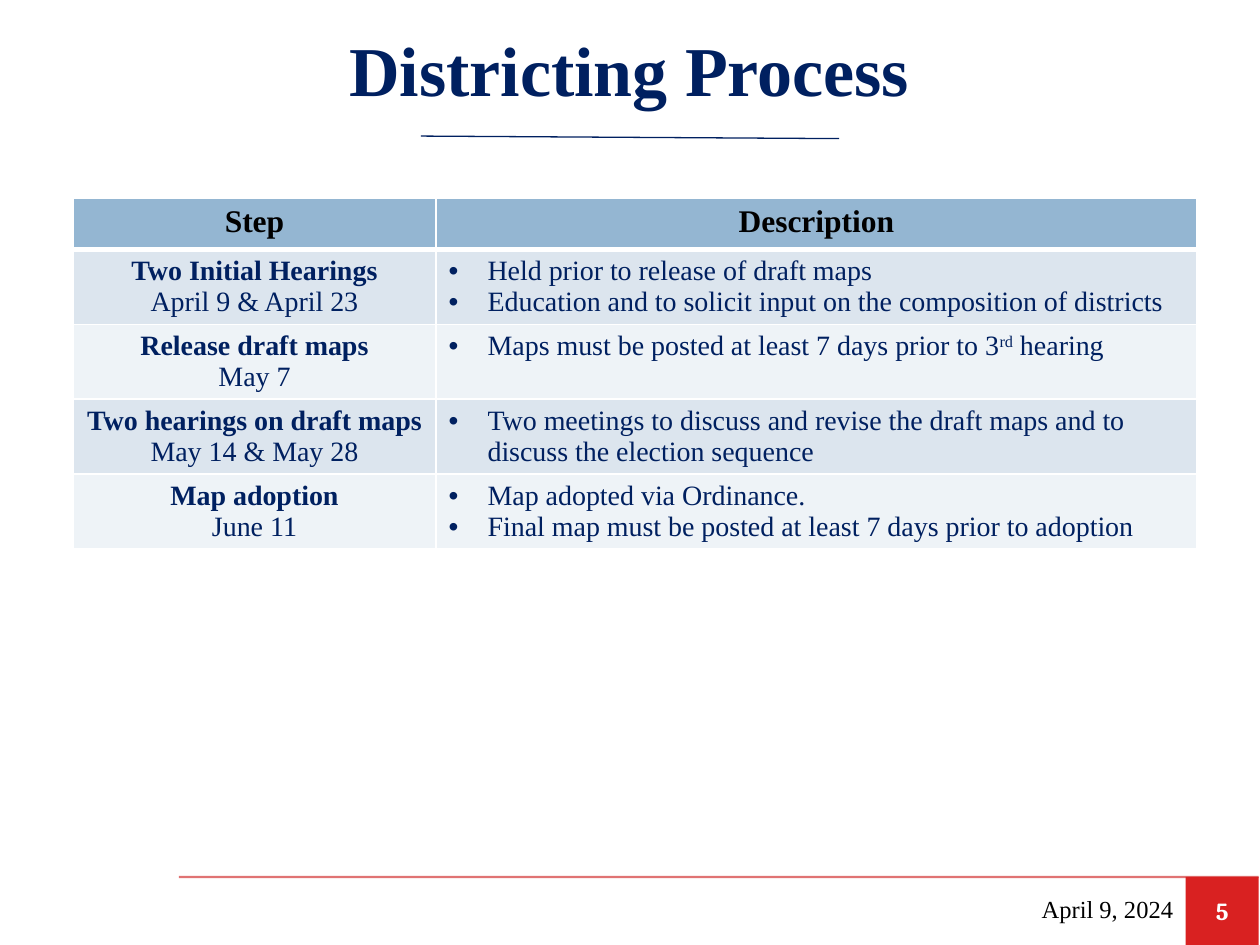
"""Build the Districting Process slide with its table of steps and dates."""
from lxml import etree
from pptx import Presentation
from pptx.dml.color import RGBColor
from pptx.enum import shapes, text
from pptx.oxml import ns
from pptx.util import Inches, Pt

COLORS = {
    "navy": "002060", "black": "000000", "white": "FFFFFF", "red": "D92121",
    "rule": "C80000", "header": "94B6D2", "band_dark": "DCE5EE", "band_light": "EEF3F7",
}
SERIF = "Times New Roman"
STEPS = [
    ("Two Initial Hearings", "April 9 & April 23",
     [["Held prior to release of draft maps"],
      ["Education and to solicit input on the composition of districts"]]),
    ("Release draft maps", "May 7",
     [["Maps must be posted at least 7 days prior to 3", "rd", " hearing"]]),
    ("Two hearings on draft maps", "May 14 & May 28",
     [["Two meetings to discuss and revise the draft maps and to "
       "discuss the election sequence"]]),
    ("Map adoption", "June 11",
     [["Map adopted via Ordinance."],
      ["Final map must be posted at least 7 days prior to adoption"]]),
]


def rgb(name):
    return RGBColor.from_string(COLORS[name])


def add_child(parent, tag, **attrs):
    return etree.SubElement(parent, ns.qn(tag), attrs)


def write(p, runs, size, color, bold=False, align=text.PP_ALIGN.CENTER, font=SERIF):
    """Fill a paragraph; every second run is a superscript."""
    p.alignment = align
    f = p.font
    f.name, f.size, f.bold = font, Pt(size), bold
    f.color.rgb = rgb(color)
    for i, words in enumerate(runs):
        r = p.add_run()
        r.text = words
        if i % 2:
            r.font._element.set("baseline", "30000")


def add_bullet(p):
    pPr = p._p.get_or_add_pPr()
    pPr.set("marL", str(Inches(0.31)))
    pPr.set("indent", str(-Inches(0.31)))
    add_child(pPr, "a:buFont", typeface="Arial")
    add_child(pPr, "a:buChar", char="•")


def paragraphs(tf, count):
    return [tf.paragraphs[0]] + [tf.add_paragraph() for _ in range(count - 1)]


def add_line(s, start, end, color, width, alpha=None):
    line = s.shapes.add_connector(
        shapes.MSO_CONNECTOR.STRAIGHT, *(Inches(v) for v in start + end))
    line.line.color.rgb = rgb(color)
    line.line.width = Pt(width)
    spPr = line._element.spPr
    add_child(spPr, "a:effectLst")
    if alpha:
        add_child(next(spPr.iter(ns.qn("a:srgbClr"))), "a:alpha", val=str(alpha * 1000))


def add_title(s, words):
    title = s.shapes.title
    title.left, title.top = Inches(0.37), Inches(0)
    title.width, title.height = Inches(9.25), Inches(1.08)
    title.text_frame.vertical_anchor = text.MSO_ANCHOR.MIDDLE
    write(title.text_frame.paragraphs[0], [words], 40, "navy", True)


def add_page_number(s, number):
    sp = s.shapes.add_shape(shapes.MSO_SHAPE.RECTANGLE, Inches(9.41), Inches(6.96),
                            Inches(0.58), Inches(0.54))
    sp.shadow.inherit = False
    sp.fill.solid()
    sp.fill.fore_color.rgb = rgb("red")
    sp.line.fill.background()
    sp.text_frame.vertical_anchor = text.MSO_ANCHOR.MIDDLE
    write(sp.text_frame.paragraphs[0], [number], 14, "white", True, font="Cambria")


def add_date(s, words):
    tf = s.shapes.add_textbox(Inches(6.49), Inches(7.01), Inches(2.92), Inches(0.4)).text_frame
    tf.word_wrap = True
    tf.vertical_anchor = text.MSO_ANCHOR.MIDDLE
    write(tf.paragraphs[0], [words], 14, "black", align=text.PP_ALIGN.RIGHT)


def style_cell(cell, fill, bottom=1):
    tcPr = cell._tc.get_or_add_tcPr()
    for side, width in zip("LRTB", (1, 1, 1, bottom)):
        ln = add_child(tcPr, f"a:ln{side}", w=str(Pt(width)))
        add_child(add_child(ln, "a:solidFill"), "a:srgbClr", val=COLORS["white"])
    cell.fill.solid()
    cell.fill.fore_color.rgb = rgb(fill)


def add_steps_table(s):
    table = s.shapes.add_table(len(STEPS) + 1, 2, Inches(0.58), Inches(1.57),
                               Inches(8.92), Inches(2.77)).table
    for column, width in zip(table.columns, (2.88, 6.04)):
        column.width = Inches(width)
    for i, row in enumerate(table.rows):
        row.height = Inches(0.59 if i else 0.41)
    for cell, label in zip(table.rows[0].cells, ("Step", "Description")):
        style_cell(cell, "header", 3)
        write(cell.text_frame.paragraphs[0], [label], 18, "black", True)
    for i, (step, dates, points) in enumerate(STEPS, 1):
        left, right = table.rows[i].cells
        for cell in (left, right):
            style_cell(cell, "band_dark" if i % 2 else "band_light")
        name, when = paragraphs(left.text_frame, 2)
        write(name, [step], 16, "navy", True)
        write(when, [dates], 16, "navy")
        for p, runs in zip(paragraphs(right.text_frame, len(points)), points):
            add_bullet(p)
            write(p, runs, 16, "navy", align=text.PP_ALIGN.LEFT)


def main():
    prs = Presentation()
    prs.slide_width, prs.slide_height = Inches(10), Inches(7.5)
    s = prs.slides.add_slide(prs.slide_layouts[5])
    add_line(s, (1.42, 6.96), (9.99, 6.96), "rule", 1.25, alpha=55)
    add_title(s, "Districting Process")
    add_page_number(s, "5")
    add_line(s, (3.34, 1.08), (6.66, 1.1), "navy", 0.75)
    add_steps_table(s)
    add_date(s, "April 9, 2024")
    prs.save("out.pptx")


if __name__ == "__main__":
    main()
